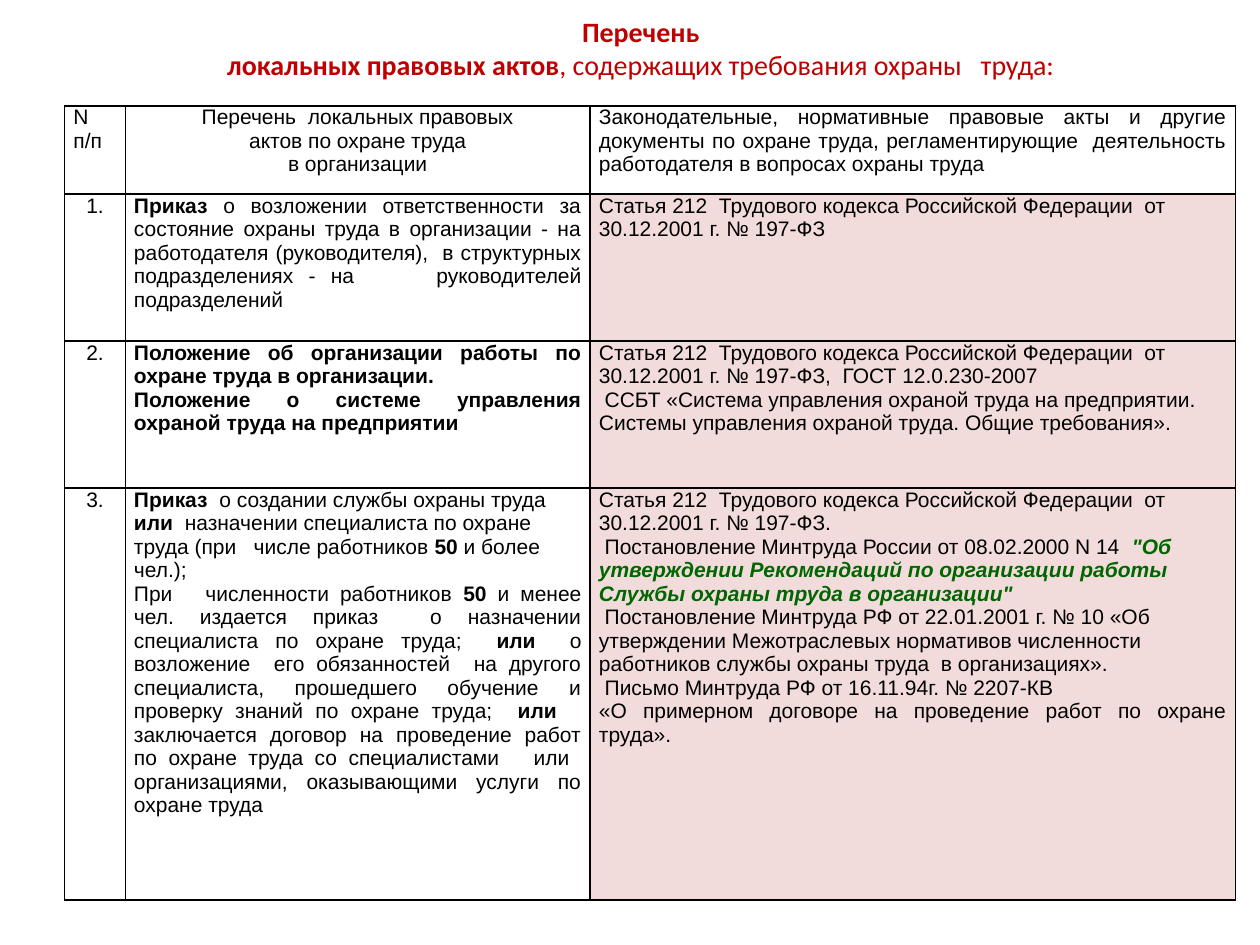
import dataclasses

import lxml.etree
import pptx
import pptx.dml.color
import pptx.enum.text
import pptx.oxml.ns
import pptx.util

Pt = pptx.util.Pt
Align = pptx.enum.text.PP_ALIGN
Anchor = pptx.enum.text.MSO_ANCHOR
qn = pptx.oxml.ns.qn


@dataclasses.dataclass(frozen=True)
class Theme:
    title_color: str = "C00000"
    body_color: str = "000000"
    accent_color: str = "006600"
    sources_fill: str = "F2DCDB"
    border_color: str = "000000"
    border_width: float = 1
    title_font: str = "Calibri"
    title_size: float = 16
    body_font: str = "Arial"
    body_size: float = 12


@dataclasses.dataclass(frozen=True)
class Line:
    spans: tuple
    align: Align = Align.LEFT
    indent: float = 0
    tab: float = 0


THEME = Theme()
BODY = dict(name=THEME.body_font, size=Pt(THEME.body_size), color=THEME.body_color, bold=False)
TITLE = dict(name=THEME.title_font, size=Pt(THEME.title_size), color=THEME.title_color, bold=False)
BOLD = dict(bold=True)
ACCENT = dict(bold=True, italic=True, color=THEME.accent_color)


def left(*spans, indent=0):
    return Line(spans, indent=indent)


def center(*spans):
    return Line(spans, Align.CENTER)


def justify(*spans, tab=0):
    return Line(spans, Align.JUSTIFY, tab=tab)


TITLE_LINE = center(
    ("Перечень\vлокальных правовых актов", BOLD), ", содержащих требования охраны   труда:"
)
ROWS = [
    [
        [justify("N"), justify("п/п")],
        [
            center("Перечень  локальных правовых"),
            center("актов по охране труда"),
            center("в организации"),
        ],
        [justify(
            "Законодательные, нормативные правовые акты и другие документы по охране труда, "
            "регламентирующие  деятельность работодателя в вопросах охраны труда"
        )],
    ],
    [
        [center("1.")],
        [justify(
            ("Приказ", BOLD),
            " о возложении ответственности за состояние охраны труда в организации - на "
            "работодателя (руководителя),  в структурных подразделениях - на\tруководителей "
            "подразделений",
            tab=162,
        )],
        [left("Статья 212  Трудового кодекса Российской Федерации  от 30.12.2001 г. № 197-ФЗ")],
    ],
    [
        [center("2.")],
        [
            justify(("Положение об организации работы по охране труда в организации.", BOLD)),
            justify(("Положение о системе управления охраной труда на предприятии", BOLD)),
        ],
        [
            left(
                "Статья 212  Трудового кодекса Российской Федерации  от  30.12.2001 г. "
                "№ 197-ФЗ,  ГОСТ 12.0.230-2007"
            ),
            left("ССБТ «Система управления охраной труда на предприятии.", indent=3.3),
            justify("Системы управления охраной труда. Общие требования»."),
        ],
    ],
    [
        [center("3.")],
        [
            left(
                ("Приказ ", BOLD), " о создании службы охраны труда ", ("или ", BOLD),
                " назначении специалиста по охране труда (при   числе работников ",
                ("50", BOLD), " и более чел.);",
            ),
            justify(
                "При   численности работников ", ("50 ", BOLD),
                "и менее чел. издается приказ  о назначении специалиста по охране труда;  ",
                ("или ", BOLD),
                " о возложение  его обязанностей  на другого специалиста, прошедшего обучение "
                "и проверку знаний по охране труда;  ",
                ("или", BOLD),
                "   заключается договор на проведение работ по охране труда со специалистами   "
                "или  организациями, оказывающими услуги по охране труда",
            ),
        ],
        [
            left("Статья 212  Трудового кодекса Российской Федерации  от  30.12.2001 г. № 197-ФЗ."),
            left(
                "Постановление Минтруда России от 08.02.2000 N 14  ",
                (
                    '"Об утверждении Рекомендаций по организации работы '
                    'Службы охраны труда в организации"',
                    ACCENT,
                ),
                indent=3.3,
            ),
            left(
                "Постановление Минтруда РФ от 22.01.2001 г. № 10 «Об утверждении Межотраслевых "
                "нормативов численности работников службы охраны труда  в организациях».",
                indent=3.3,
            ),
            left("Письмо Минтруда РФ от 16.11.94г. № 2207-КВ", indent=3.3),
            justify("«О примерном договоре на проведение работ по охране труда»."),
        ],
    ],
]


def color_of(value):
    return pptx.dml.color.RGBColor.from_string(value)


def assign(target, values):
    for name, value in values.items():
        setattr(target, name, value)


def write_line(para, line, base):
    para.alignment = line.align
    properties = para._p.get_or_add_pPr()
    if line.indent:
        properties.set("indent", str(Pt(line.indent)))
    if line.tab:
        stops = lxml.etree.SubElement(properties, qn("a:tabLst"))
        lxml.etree.SubElement(stops, qn("a:tab"), pos=str(Pt(line.tab)), algn="l")
    for part in line.spans:
        text, style = (part, {}) if isinstance(part, str) else part
        values = {**base, **style}
        color = color_of(values.pop("color"))
        for index, piece in enumerate(text.split("\v")):
            if index:
                para.add_line_break()
            span = para.add_run()
            span.text = piece
            assign(span.font, values)
            span.font.color.rgb = color


def add_borders(cell):
    properties = cell._tc.get_or_add_tcPr()
    for side in ("lnL", "lnR", "lnT", "lnB"):
        border = lxml.etree.SubElement(
            properties, qn(f"a:{side}"), w=str(Pt(THEME.border_width))
        )
        fill = lxml.etree.SubElement(border, qn("a:solidFill"))
        lxml.etree.SubElement(fill, qn("a:srgbClr"), val=THEME.border_color)


def fill_cell(cell, lines, color):
    assign(cell, dict(margin_left=Pt(5), margin_right=Pt(5), margin_top=0, margin_bottom=0,
                      vertical_anchor=Anchor.TOP))
    add_borders(cell)
    if color:
        cell.fill.solid()
        cell.fill.fore_color.rgb = color_of(color)
    else:
        cell.fill.background()
    for index, line in enumerate(lines):
        frame = cell.text_frame
        para = frame.add_paragraph() if index else frame.paragraphs[0]
        write_line(para, line, BODY)


def add_title(page, x, y, width, height):
    frame = page.shapes.add_textbox(Pt(x), Pt(y), Pt(width), Pt(height)).text_frame
    assign(frame, dict(word_wrap=True, vertical_anchor=Anchor.MIDDLE, margin_bottom=Pt(23.1)))
    write_line(frame.paragraphs[0], TITLE_LINE, TITLE)


def add_acts_table(page, x, y, width, height):
    shares = [0.05, 0.4, 0.55]
    widths = [34.6, 265.7, width - 34.6 - 265.7]
    heights = [50.4, 84, 84, height - 50.4 - 2 * 84]
    table = page.shapes.add_table(
        len(heights), len(widths), Pt(x), Pt(y), Pt(width), Pt(height)
    ).table
    assign(table, dict(first_row=False, horz_banding=False))
    for column, size in zip(table.columns, widths):
        column.width = Pt(size)
    for row, size in zip(table.rows, heights):
        row.height = Pt(size)
    for row_index, row in enumerate(ROWS):
        for column_index, lines in enumerate(row):
            is_source = row_index > 0 and column_index == 2
            fill_cell(table.cell(row_index, column_index), lines,
                      THEME.sources_fill if is_source else None)


def main():
    deck = pptx.Presentation()
    assign(deck, dict(slide_width=Pt(720), slide_height=Pt(540)))
    page = deck.slides.add_slide(deck.slide_layouts[6])
    add_title(page, 48, -8, 636.5, 90)
    add_acts_table(page, 37, 60.5, 669, 453.8)
    deck.save("out.pptx")


if __name__ == "__main__":
    main()
